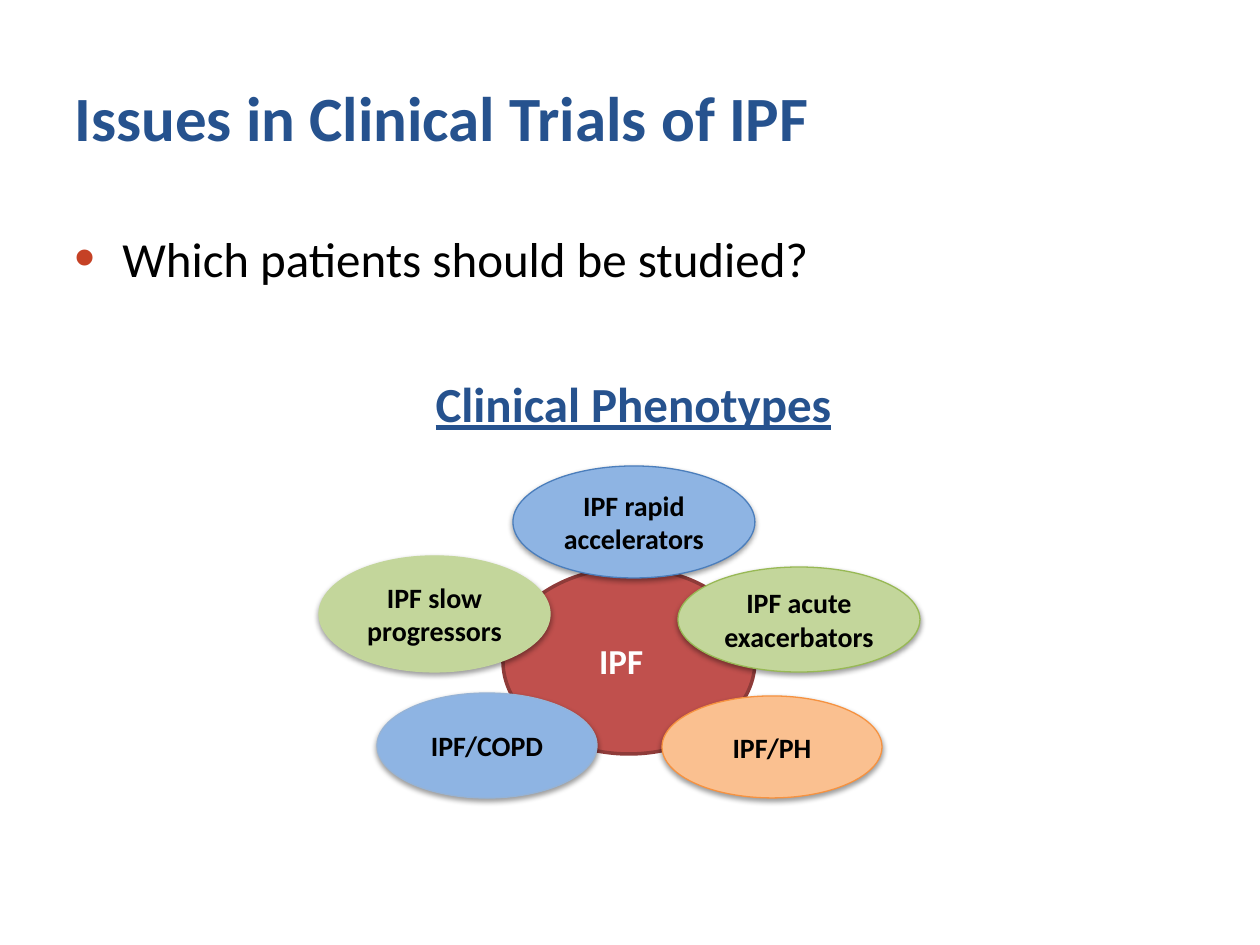
from lxml import etree
from pptx import Presentation
from pptx import util as u
from pptx.dml.color import RGBColor
from pptx.enum import shapes, text
from pptx.oxml import parse_xml
from pptx.oxml.ns import nsdecls, qn

FONT = "Calibri"
COLORS = {
    "title": "26528E", "bullet": "C54125", "black": "000000", "white": "FFFFFF",
    "red": "C0504D", "red_line": "8E3B39", "blue": "8EB4E3", "blue_line": "4B7EBC",
    "pale_line": "95B3D7", "orange": "FAC090", "orange_line": "F69240",
    "green": "C3D69B", "green_line": "98B955",
}
PHENOTYPES = [
    ("IPF/COPD", (58, 369, 220, 105), "blue", "pale_line"),
    ("IPF rapid\naccelerators", (194, 142, 242, 112), "blue", "blue_line"),
    ("IPF/PH", (343, 372, 220, 102), "orange", "orange_line"),
    ("IPF slow\nprogressors", (0, 232, 231, 116), "green", "green"),
    ("IPF acute\nexacerbators", (359, 243, 242, 105), "green", "green_line"),
]


def px(n):
    """Turn pixels into EMU."""
    return u.Emu(round(n * 914400 / 126))


def rgb(name):
    """Return the named colour."""
    return RGBColor.from_string(COLORS[name])


def inside(box, part):
    """Place a part relative to the corner of a box."""
    return box[0] + part[0], box[1] + part[1], part[2], part[3]


def write(sp, words, size, color, bold=False, underline=None, align="LEFT",
          anchor="MIDDLE", wrap=True, bullet=None):
    """Fill a shape with formatted paragraphs."""
    tf = sp.text_frame
    tf.word_wrap = wrap
    tf.vertical_anchor = text.MSO_ANCHOR[anchor]
    for i, line in enumerate(words.split("\n")):
        p = tf.add_paragraph() if i else tf.paragraphs[0]
        p.alignment = text.PP_ALIGN[align]
        if bullet:
            add_bullet(p, bullet)
        r = p.add_run()
        r.text = line
        r.font.name, r.font.size = FONT, u.Pt(size)
        r.font.bold, r.font.underline = bold, underline
        r.font.color.rgb = rgb(color)


def add_bullet(p, color):
    """Give a paragraph a coloured bullet and a hanging indent."""
    pPr = p._p.get_or_add_pPr()
    pPr.set("marL", str(px(48)))
    pPr.set("indent", str(-px(48)))
    clr = etree.SubElement(pPr, qn("a:buClr"))
    etree.SubElement(clr, qn("a:srgbClr"), val=COLORS[color])
    etree.SubElement(pPr, qn("a:buSzPct"), val="120000")
    etree.SubElement(pPr, qn("a:buFont"), typeface="Arial")
    etree.SubElement(pPr, qn("a:buChar"), char="•")


def add_shadow(sp):
    """Give a shape a soft shadow below it."""
    sp._element.spPr.remove(sp._element.spPr.find(qn("a:effectLst")))
    sp._element.spPr.append(parse_xml(
        f'<a:effectLst {nsdecls("a")}><a:outerShdw blurRad="{u.Pt(3.1)}" '
        f'dist="{u.Pt(1.6)}" dir="5400000" rotWithShape="0">'
        f'<a:srgbClr val="{COLORS["black"]}"><a:alpha val="38000"/></a:srgbClr>'
        '</a:outerShdw></a:effectLst>'))


def add_text(s, box, words, **fmt):
    """Add a text box."""
    sp = s.shapes.add_textbox(*map(px, box))
    write(sp, words, **fmt)
    return sp


def add_ellipse(s, box, words, fill, line, width=0.75, shadow=True, **fmt):
    """Add a labelled ellipse."""
    sp = s.shapes.add_shape(shapes.MSO_SHAPE.OVAL, *map(px, box))
    sp.fill.solid()
    sp.fill.fore_color.rgb = rgb(fill)
    sp.line.color.rgb = rgb(line)
    sp.line.width = u.Pt(width)
    sp.shadow.inherit = False
    if shadow:
        add_shadow(sp)
    write(sp, words, bold=True, align="CENTER", wrap=False, **fmt)
    return sp


def title(s, box):
    """Add the slide title."""
    add_text(s, box, "Issues in Clinical Trials of IPF", size=36, color="title", bold=True)


def question(s, box):
    """Add the bulleted question."""
    add_text(s, box, "Which patients should be studied?", size=28, color="black",
             anchor="TOP", bullet="bullet")


def phenotypes(s, box):
    """Add the heading and the ring of phenotypes around the disease."""
    core = add_ellipse(s, inside(box, (184, 244, 252, 186)), "IPF", "red", "red_line",
                       width=2, shadow=False, size=20, color="white")
    core.text_frame.margin_right = px(28)
    for words, part, fill, line in PHENOTYPES:
        add_ellipse(s, inside(box, part), words, fill, line, size=16, color="black")
    add_text(s, inside(box, (87, 0, 455, 158)), "Clinical Phenotypes", size=28,
             color="title", bold=True, underline=True, align="CENTER")


def main():
    """Build and save the slide."""
    prs = Presentation()
    prs.slide_width, prs.slide_height = px(1260), px(945)
    s = prs.slides.add_slide(prs.slide_layouts[6])
    title(s, (62, 37, 1260, 158))
    question(s, (62, 222, 1134, 136))
    phenotypes(s, (319, 324, 601, 474))
    prs.save("out.pptx")


if __name__ == "__main__":
    main()
